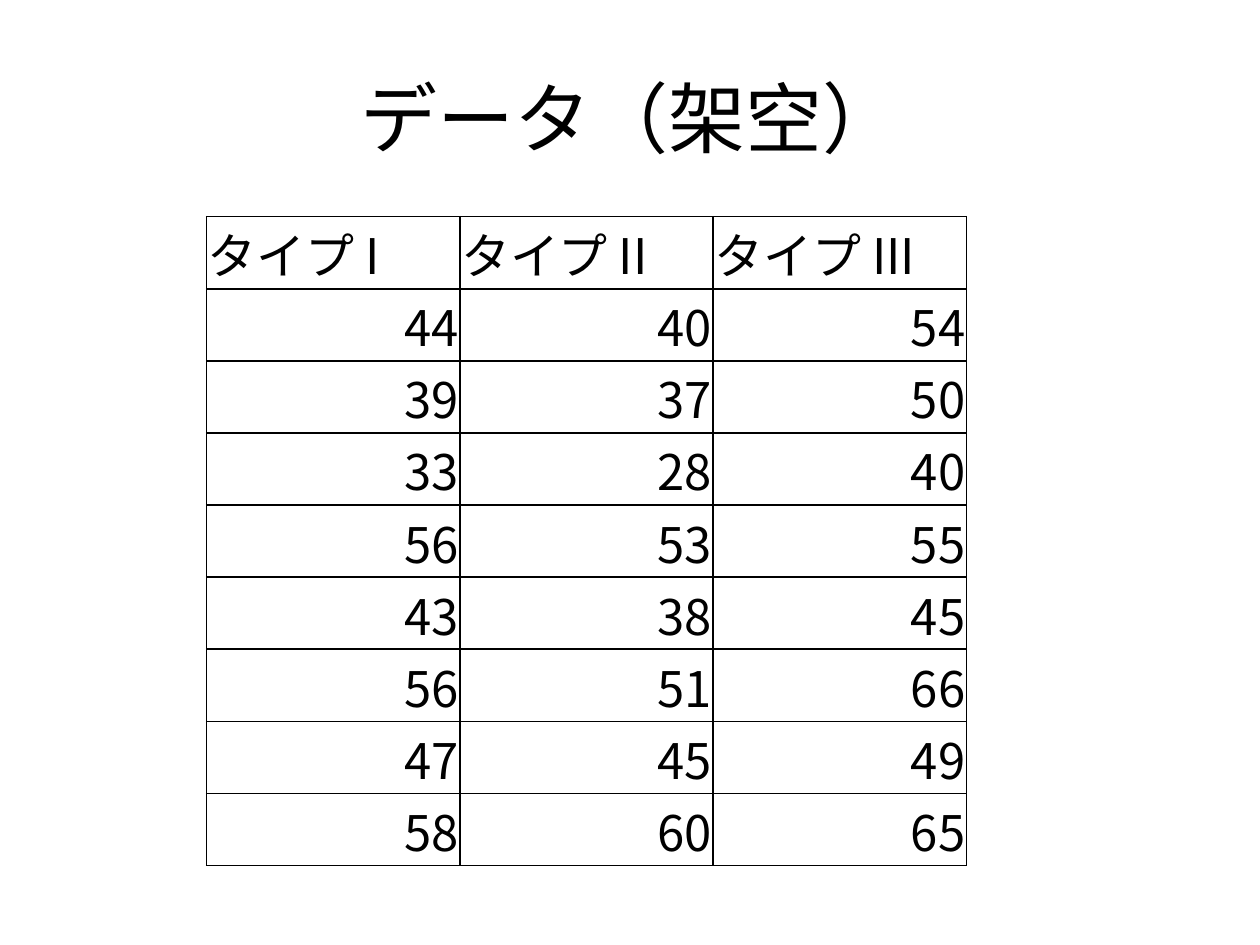
from lxml.etree import SubElement
from pptx import Presentation
from pptx.dml.color import RGBColor
from pptx.enum.text import MSO_ANCHOR as Anchor, PP_ALIGN as Align
from pptx.oxml.ns import qn
from pptx.util import Inches, Pt

# Content
TITLE = "データ（架空）"
HEADERS = ["タイプ I", "タイプ II", "タイプ III"]
SCORES = [
    (44, 40, 54),
    (39, 37, 50),
    (33, 28, 40),
    (56, 53, 55),
    (43, 38, 45),
    (56, 51, 66),
    (47, 45, 49),
    (58, 60, 65),
]

# Formats
BLACK = RGBColor(0, 0, 0)
TITLE_FONT = {"name": "Calibri", "size": Pt(44)}
CELL_FONT = {"name": "Noto Sans CJK JP", "size": Pt(28)}
TITLE_BOX = {"left": 0.5, "top": 0.3, "width": 9, "height": 1.25}
TABLE_LEFT, TABLE_TOP = 1.64, 1.72
COLUMN_WIDTH, ROW_HEIGHT = 2.01, 0.51
CELL_FORMAT = {
    "vertical_anchor": Anchor.MIDDLE,
    "margin_left": Inches(0.01),
    "margin_right": Inches(0.01),
    "margin_top": Inches(0.01),
    "margin_bottom": 0,
}


def write(paragraph, text, font, alignment):
    paragraph.alignment = alignment
    run = paragraph.add_run()
    run.text = text
    for name, value in font.items():
        setattr(run.font, name, value)
    run.font.color.rgb = BLACK
    east_asian = SubElement(run.font._element, qn("a:ea"))
    east_asian.set("typeface", font["name"])


def add_borders(cell):
    properties = cell._tc.get_or_add_tcPr()
    for position, side in enumerate(("a:lnL", "a:lnR", "a:lnT", "a:lnB")):
        line = properties.makeelement(qn(side), {"w": str(Pt(1))})
        fill = SubElement(line, qn("a:solidFill"))
        SubElement(fill, qn("a:srgbClr")).set("val", str(BLACK))
        properties.insert(position, line)


presentation = Presentation()
presentation.slide_width, presentation.slide_height = Inches(10), Inches(7.5)
slide = presentation.slides.add_slide(presentation.slide_layouts[5])

# Title
title = slide.shapes.title
for name, value in TITLE_BOX.items():
    setattr(title, name, Inches(value))
title.text_frame.vertical_anchor = Anchor.MIDDLE
write(title.text_frame.paragraphs[0], TITLE, TITLE_FONT, Align.CENTER)

# Score table
rows = [HEADERS, *SCORES]
table = slide.shapes.add_table(
    len(rows), len(HEADERS),
    Inches(TABLE_LEFT), Inches(TABLE_TOP),
    Inches(COLUMN_WIDTH * len(HEADERS)), Inches(ROW_HEIGHT * len(rows)),
).table
table.first_row = table.horz_banding = False
for column in table.columns:
    column.width = Inches(COLUMN_WIDTH)
for row_index, values in enumerate(rows):
    table.rows[row_index].height = Inches(ROW_HEIGHT)
    alignment = Align.RIGHT if row_index else Align.LEFT
    for column_index, value in enumerate(values):
        cell = table.cell(row_index, column_index)
        for name, setting in CELL_FORMAT.items():
            setattr(cell, name, setting)
        cell.fill.background()
        add_borders(cell)
        write(cell.text_frame.paragraphs[0], str(value), CELL_FONT, alignment)

presentation.save("out.pptx")
